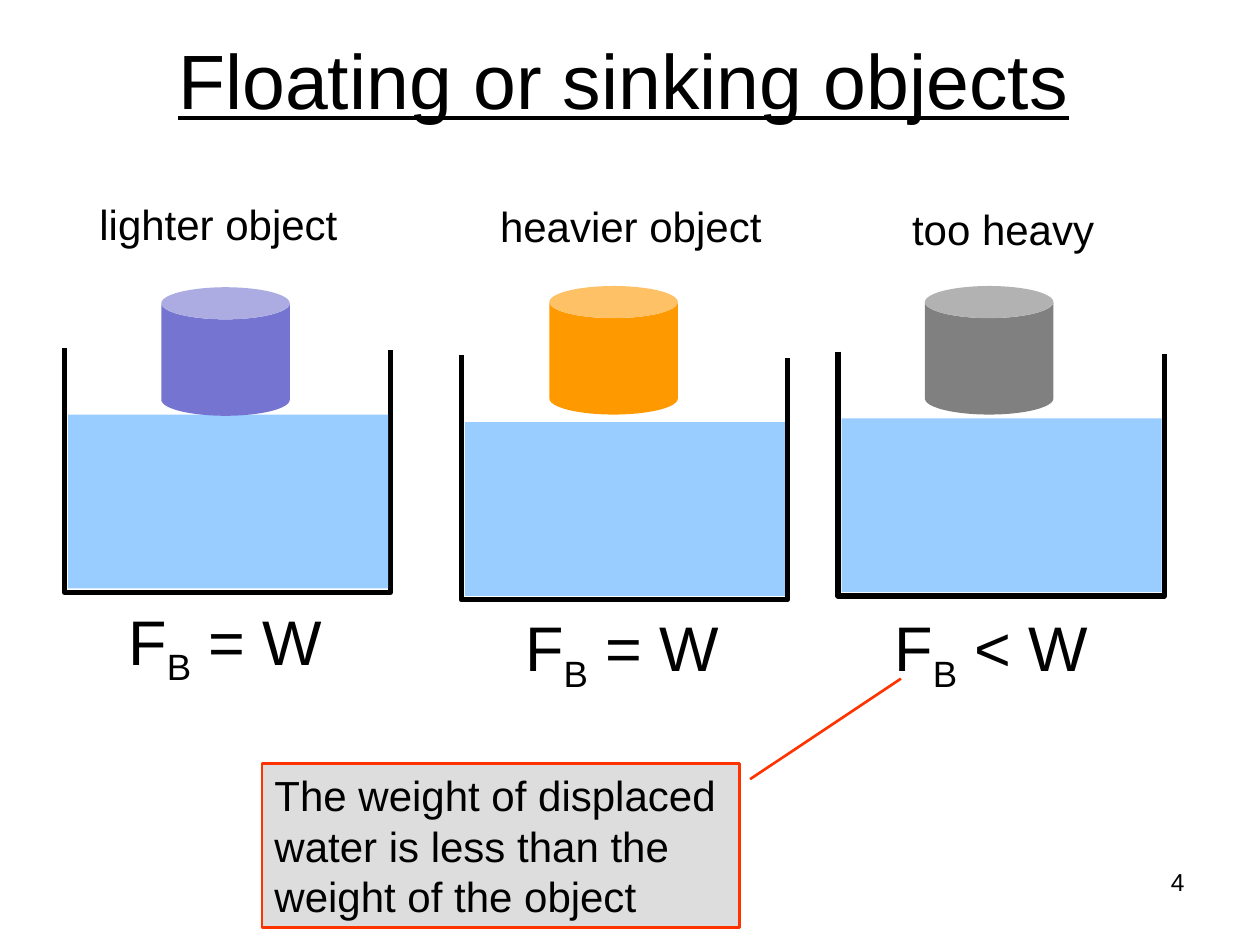
from dataclasses import dataclass

from lxml.etree import SubElement
from pptx import Presentation
from pptx.dml.color import RGBColor
from pptx.enum.shapes import MSO_SHAPE
from pptx.enum.text import MSO_ANCHOR, PP_ALIGN
from pptx.oxml.ns import qn
from pptx.util import Inches, Pt


@dataclass(frozen=True)
class Theme:
    font: str = "Arial"
    ink: str = "000000"
    water: str = "99CCFF"
    note_fill: str = "DDDDDD"
    note_line: str = "FF3300"
    title_size: int = 44
    formula_size: int = 36
    text_size: int = 24
    number_size: int = 14
    wall_width: float = 3
    note_width: float = 1.5


theme = Theme()


def write(frame, lines, size, align=PP_ALIGN.LEFT, wrap=True, **font_format):
    """Fill a text frame; each line is a list of (text, baseline percent) pairs."""
    frame.word_wrap = wrap
    for index, line in enumerate(lines):
        para = frame.paragraphs[0] if index == 0 else frame.add_paragraph()
        para.alignment = align
        for text, baseline in line:
            span = para.add_run()
            span.text = text
            values = {"name": theme.font, "size": Pt(size), **font_format}
            for name, value in values.items():
                setattr(span.font, name, value)
            span.font.color.rgb = RGBColor.from_string(theme.ink)
            if baseline:
                span.font._element.set("baseline", str(baseline * 1000))


def add_filled(page, kind, left, top, width, height, color):
    shape = page.shapes.add_shape(
        kind, Inches(left), Inches(top), Inches(width), Inches(height))
    shape.shadow.inherit = False
    shape.fill.solid()
    shape.fill.fore_color.rgb = RGBColor.from_string(color)
    shape.line.fill.background()
    return shape


deck = Presentation()
deck.slide_width, deck.slide_height = Inches(10), Inches(7.5)
page = deck.slides.add_slide(deck.slide_layouts[5])

title = page.shapes.title
title.left, title.top = Inches(0.45), Inches(0)
title.width, title.height = Inches(9), Inches(1.25)
title.text_frame.vertical_anchor = MSO_ANCHOR.MIDDLE
write(title.text_frame, [[("Floating or sinking objects", 0)]],
      theme.title_size, PP_ALIGN.CENTER, underline=True)

# Tank corner, can corner and color, label box, formula corner and relation
tanks = [
    ((0.51, 2.76), (1.28, 2.28), "7575D1",
     "lighter object", (0.69, 1.53, 2.09), (0.92, 4.73), "="),
    ((3.66, 2.82), (4.36, 2.27), "FF9900",
     "heavier object", (3.87, 1.54, 2.28), (4.07, 4.78), "="),
    ((6.65, 2.79), (7.34, 2.27), "808080",
     "too heavy", (7.14, 1.57, 1.65), (7, 4.78), "<"),
]
tank_width, tank_height, can_size = 2.59, 1.94, 1.02

for (left, top), can, color, label, label_box, formula, relation in tanks:
    right, bottom = left + tank_width, top + tank_height
    outline = page.shapes.build_freeform(Inches(left), Inches(top))
    outline.add_line_segments(
        [(Inches(x), Inches(y)) for x, y in
         ((left, bottom), (right, bottom), (right, top + 0.02))], close=False)
    walls = outline.convert_to_shape()
    walls.shadow.inherit = False
    walls.fill.background()
    walls.line.color.rgb = RGBColor.from_string(theme.ink)
    walls.line.width = Pt(theme.wall_width)
    SubElement(walls.line._get_or_add_ln(), qn("a:round"))

    add_filled(page, MSO_SHAPE.RECTANGLE, left + 0.03, top + 0.53,
               2.54, 1.38, theme.water)
    cylinder = add_filled(page, MSO_SHAPE.CAN, *can, can_size, can_size, color)
    cylinder.adjustments[0] = 0.25

    label_left, label_top, label_width = label_box
    texts = [
        (label_left, label_top, label_width, 0.5, [(label, 0)], theme.text_size),
        (*formula, 1.79, 0.71,
         [("F", 0), ("B", -25), (f" {relation} W", 0)], theme.formula_size),
    ]
    for x, y, width, height, line, size in texts:
        box = page.shapes.add_textbox(
            Inches(x), Inches(y), Inches(width), Inches(height))
        write(box.text_frame, [line], size, wrap=False)

note = add_filled(page, MSO_SHAPE.LINE_CALLOUT_1, 2.08, 6.06, 3.79, 1.3,
                  theme.note_fill)
for index, value in enumerate((0.096, 1.022, -0.518, 1.338)):
    note.adjustments[index] = value
note.line.color.rgb = RGBColor.from_string(theme.note_line)
note.line.width = Pt(theme.note_width)
note.text_frame.vertical_anchor = MSO_ANCHOR.TOP
note_lines = ("The weight of displaced", "water is less than the",
              "weight of the object")
write(note.text_frame, [[(line, 0)] for line in note_lines], theme.text_size)

number = page.shapes.add_textbox(
    Inches(7.17), Inches(6.83), Inches(2.33), Inches(0.52))
write(number.text_frame, [[("4", 0)]], theme.number_size, PP_ALIGN.RIGHT)

deck.save("out.pptx")
